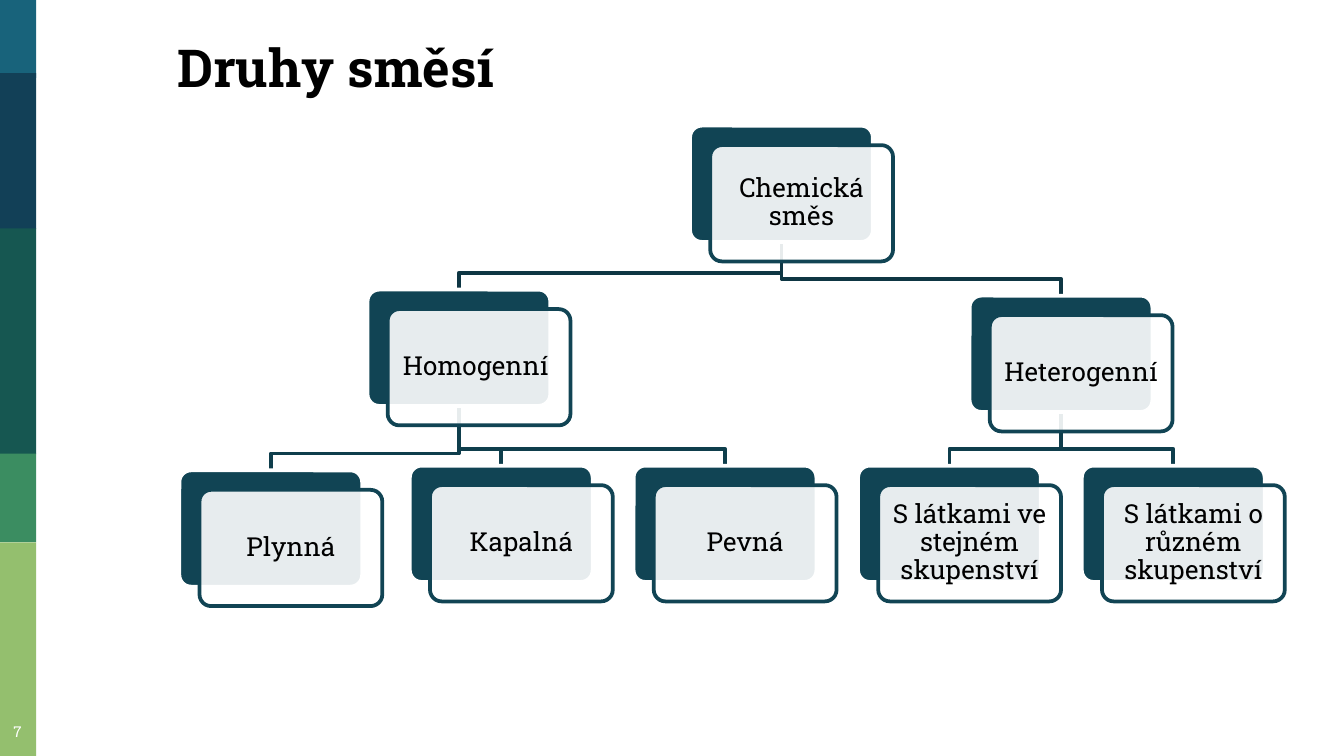
"""Builds the slide that sorts chemical mixtures into a tree of kinds."""
from pptx import Presentation
from pptx.dml.color import RGBColor as RGB
from pptx.enum.shapes import MSO_SHAPE as SHAPE
from pptx.enum.text import MSO_ANCHOR as ANCHOR, MSO_AUTO_SIZE as AUTO, PP_ALIGN as ALIGN
from pptx.oxml.ns import qn
from pptx.util import Pt
from lxml.etree import SubElement

PX = 4572
FONT = "Roboto Slab"
COLORS = {
    "black": "000000", "white": "FFFFFF", "node": "114454",
    "upper_link": "0E3643", "lower_link": "0F3E4C",
    "blue": "18637B", "navy": "124057", "pine": "165751",
    "green": "3B8D61", "lime": "94BF6E",
}


def paint(shape, fill=None, line=None):
    shape.shadow.inherit = False
    if fill:
        shape.fill.solid()
        shape.fill.fore_color.rgb = RGB.from_string(COLORS[fill])
    else:
        shape.fill.background()
    if line:
        shape.line.color.rgb = RGB.from_string(COLORS[line])
        shape.line.width = Pt(2)
    else:
        shape.line.fill.background()


def write(shape, text, size, color, frame_format, paragraph_format, bold=False):
    frame = shape.text_frame
    frame.text = text
    paragraph = frame.paragraphs[0]
    font_format = {"name": FONT, "size": Pt(size), "bold": bold}
    for target, values in ((frame, frame_format), (paragraph, paragraph_format),
                           (paragraph.runs[0].font, font_format)):
        for key, value in values.items():
            setattr(target, key, value)
    paragraph.runs[0].font.color.rgb = RGB.from_string(COLORS[color])


deck = Presentation()
deck.slide_width, deck.slide_height = 2000 * PX, 1125 * PX
slide = deck.slides.add_slide(deck.slide_layouts[5])
shapes = slide.shapes

bands = [("blue", 0, 116), ("navy", 109, 232), ("pine", 340, 336),
         ("green", 675, 132), ("lime", 807, 318)]
for color, top, height in bands:
    band = shapes.add_shape(SHAPE.RECTANGLE, 0, top * PX, 54 * PX, height * PX)
    paint(band, color)

page_number = shapes.add_textbox(-12 * PX, 1054 * PX, 76 * PX, 70 * PX)
write(page_number, "7", 8, "white",
      {"word_wrap": True, "vertical_anchor": ANCHOR.MIDDLE,
       "margin_top": 20 * PX, "margin_bottom": 20 * PX},
      {"alignment": ALIGN.CENTER})

heading = shapes.title
for side, length in {"left": 244, "top": 42, "width": 514, "height": 114}.items():
    setattr(heading, side, length * PX)
write(heading, "Druhy směsí", 28, "black",
      {"word_wrap": False, "auto_size": AUTO.SHAPE_TO_FIT_TEXT,
       "vertical_anchor": ANCHOR.TOP},
      {"alignment": ALIGN.LEFT}, bold=True)

NODE_W, NODE_H, SHIFT_X, SHIFT_Y, BEND = 272, 173, 30, 29, 25
mixtures = {
    "Chemická směs": (1027, 187),
    "Homogenní ": (547, 431),
    "Plynná": (267, 700),
    "Kapalná": (610, 693),
    "Pevná": (943, 693),
    "Heterogenní": (1443, 440),
    "S látkami ve stejném skupenství": (1277, 693),
    "S látkami o různém skupenství": (1610, 693),
}
branches = [
    ("Heterogenní", "S látkami o různém skupenství", "lower_link"),
    ("Heterogenní", "S látkami ve stejném skupenství", "lower_link"),
    ("Chemická směs", "Heterogenní", "upper_link"),
    ("Homogenní ", "Pevná", "lower_link"),
    ("Homogenní ", "Kapalná", "lower_link"),
    ("Homogenní ", "Plynná", "lower_link"),
    ("Chemická směs", "Homogenní ", "upper_link"),
]
for parent, child, color in branches:
    start_x, end_x = (mixtures[name][0] + NODE_W // 2 for name in (parent, child))
    start_y, end_y = mixtures[parent][1] + NODE_H, mixtures[child][1]
    bend_y = end_y - BEND
    route = shapes.build_freeform(start_x, start_y, scale=PX)
    route.add_line_segments([(start_x, bend_y), (end_x, bend_y), (end_x, end_y)], close=False)
    paint(route.convert_to_shape(), line=color)

node_frame = {"word_wrap": True, "vertical_anchor": ANCHOR.MIDDLE}
node_frame.update({f"margin_{side}": 12 * PX for side in ("left", "top", "right", "bottom")})
node_paragraph = {"alignment": ALIGN.CENTER, "line_spacing": 0.9, "space_after": Pt(5)}
for name, (left, top) in mixtures.items():
    for shift_x, shift_y, fill, line in ((0, 0, "node", "white"),
                                         (SHIFT_X, SHIFT_Y, "white", "node")):
        card = shapes.add_shape(SHAPE.ROUNDED_RECTANGLE, (left + shift_x) * PX,
                                (top + shift_y) * PX, NODE_W * PX, NODE_H * PX)
        card.adjustments[0] = 0.1
        paint(card, fill, line)
    tint = card._element.spPr.find(qn("a:solidFill")).find(qn("a:srgbClr"))
    SubElement(tint, qn("a:alpha")).set("val", "90000")
    write(card, name, 14, "black", node_frame, node_paragraph)

deck.save("out.pptx")
